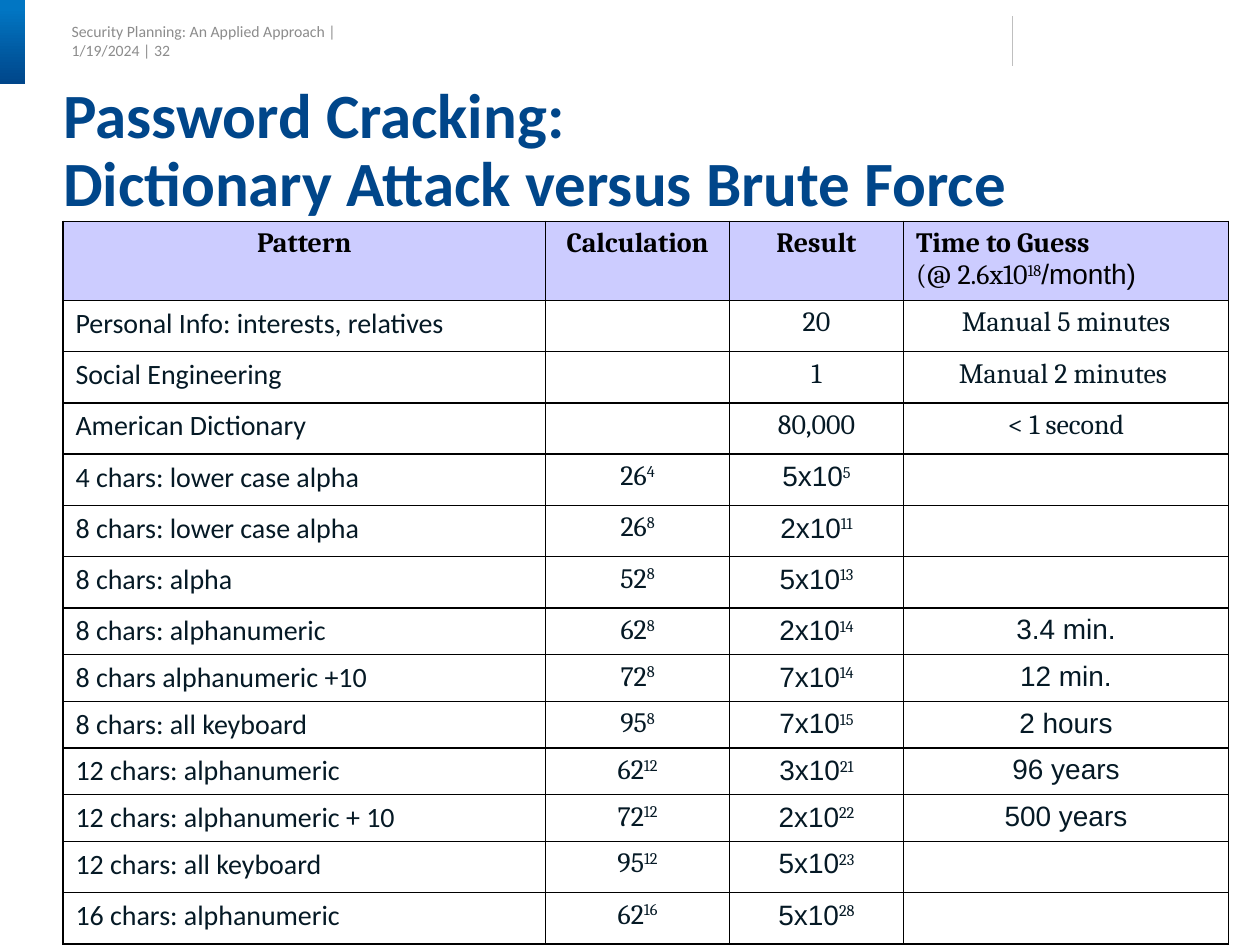
from lxml import etree
from pptx import Presentation
from pptx.dml.color import RGBColor
from pptx.enum import shapes, text
from pptx.oxml import ns
from pptx.util import Pt


def color(hex_string):
    return RGBColor.from_string(hex_string)


def text_box(left, top, width, height, words, size, ink):
    box = slide.shapes.add_textbox(Pt(left), Pt(top), Pt(width), Pt(height))
    frame = box.text_frame
    frame.margin_left = frame.margin_top = frame.margin_right = frame.margin_bottom = 0
    frame.text = words
    font = frame.paragraphs[0].font
    font.name, font.size, font.color.rgb = "Calibri", Pt(size), color(ink)
    return frame


deck = Presentation()
deck.slide_width, deck.slide_height = Pt(720), Pt(540)
slide = deck.slides.add_slide(deck.slide_layouts[6])

# Header line
header = text_box(41, 16.5, 204.5, 16.5,
                  "Security Planning: An Applied Approach | 1/19/2024 | 32", 9, "8C8C8C")
header.word_wrap = False
header.vertical_anchor = text.MSO_ANCHOR.MIDDLE
header.margin_right, header.margin_bottom = Pt(14.4), Pt(2.9)

# Corner accent
accent = slide.shapes.add_shape(shapes.MSO_SHAPE.ROUNDED_RECTANGLE, 0, 0, Pt(14.4), Pt(48))
accent.adjustments[0] = 0
accent.shadow.inherit = False
accent.line.fill.background()
accent.fill.gradient()
accent.fill.gradient_angle = 270
for stop, (position, shade) in zip(accent.fill.gradient_stops, [(0.1, "0176C3"), (1, "00468A")]):
    stop.position, stop.color.rgb = position, color(shade)

# Divider at the top right
divider = slide.shapes.add_connector(shapes.MSO_CONNECTOR.STRAIGHT,
                                     Pt(578.6), Pt(9.2), Pt(578.6), Pt(37.7))
divider.line.color.rgb, divider.line.width = color("BFBFBF"), Pt(0.75)
etree.SubElement(divider._element.spPr, ns.qn("a:effectLst"))

# Password table: "^" sets off a superscript, "|" a change of font after it
patterns = [
    ("Pattern", "Calculation", "Result", "Time to Guess\n(@ 2.6x10^18|/month)"),
    ("Personal Info: interests, relatives", "", "20", "Manual 5 minutes"),
    ("Social Engineering", "", "1", "Manual 2 minutes "),
    ("American Dictionary", "", "80,000", "< 1 second"),
    ("4 chars: lower case alpha", "26^4", "5x10^5", ""),
    ("8 chars: lower case alpha", "26^8", "2x10^11", ""),
    ("8 chars: alpha", "52^8", "5x10^13", ""),
    ("8 chars: alphanumeric", "62^8", "2x10^14", "3.4 min."),
    ("8 chars alphanumeric +10", "72^8", "7x10^14", "12 min."),
    ("8 chars: all keyboard", "95^8", "7x10^15", "2 hours"),
    ("12 chars: alphanumeric", "62^12", "3x10^21", "96 years"),
    ("12 chars: alphanumeric + 10", "72^12", "2x10^22", "500 years"),
    ("12 chars: all keyboard", "95^12", "5x10^23", ""),
    ("16 chars: alphanumeric", "62^16", "5x10^28", ""),
]
column_widths = [275.8, 105.1, 99.4, 185.8]
row_heights = [45.2 if r == 0 else 26.7 if all(row) else 29.3 for r, row in enumerate(patterns)]
table = slide.shapes.add_table(len(patterns), 4, Pt(36), Pt(126.5),
                               Pt(sum(column_widths)), Pt(sum(row_heights))).table
table.first_row = table.horz_banding = False
for column, width in zip(table.columns, column_widths):
    column.width = Pt(width)

for r, row in enumerate(patterns):
    table.rows[r].height = Pt(row_heights[r])
    for c, words in enumerate(row):
        cell = table.cell(r, c)

        # Borders and fill
        for side in ("lnL", "lnR", "lnT", "lnB"):
            border = etree.SubElement(cell._tc.get_or_add_tcPr(), ns.qn("a:" + side), w="12700")
            ink = etree.SubElement(border, ns.qn("a:solidFill"))
            etree.SubElement(ink, ns.qn("a:srgbClr"), val="000000")
        if r == 0:
            cell.fill.solid()
            cell.fill.fore_color.rgb = color("CCCCFF")
        else:
            cell.fill.background()
        if not words:
            continue

        # Typeface by column: numbers worked out by machine are in Arial
        arial = r > 3 and c > 1
        face = "Arial" if arial else "Calibri" if r and c == 0 else "Cambria"
        cell.margin_top = Pt(5 if arial else 3.6)
        cell.margin_bottom = Pt(3.6)
        for n, line in enumerate(words.split("\n")):
            paragraph = cell.text_frame.paragraphs[0] if n == 0 else cell.text_frame.add_paragraph()
            if (r, c) != (0, 3) and (r == 0 or c > 0):
                paragraph.alignment = text.PP_ALIGN.CENTER
            paragraph.line_spacing = 0.93 if arial else 0.98
            paragraph.font.size = Pt(16)
            paragraph.font.bold = r == 0 and n == 0
            paragraph.font.color.rgb = color("051925" if r else "000000")
            base, _, rest = line.partition("^")
            power, _, tail = rest.partition("|")
            for piece, name in ((base, face), (power, "Cambria"), (tail, "Arial")):
                if piece:
                    run = paragraph.add_run()
                    run.text, run.font.name = piece, name
                    if piece is power:
                        run.font._element.set("baseline", "30000")

# Title
title = text_box(36, 48.2, 642.2, 78.5,
                 "Password Cracking:\vDictionary Attack versus Brute Force", 36, "00468A")
title.word_wrap = True
title.paragraphs[0].font.bold = True
title.paragraphs[0].line_spacing = 0.9

deck.save("out.pptx")
